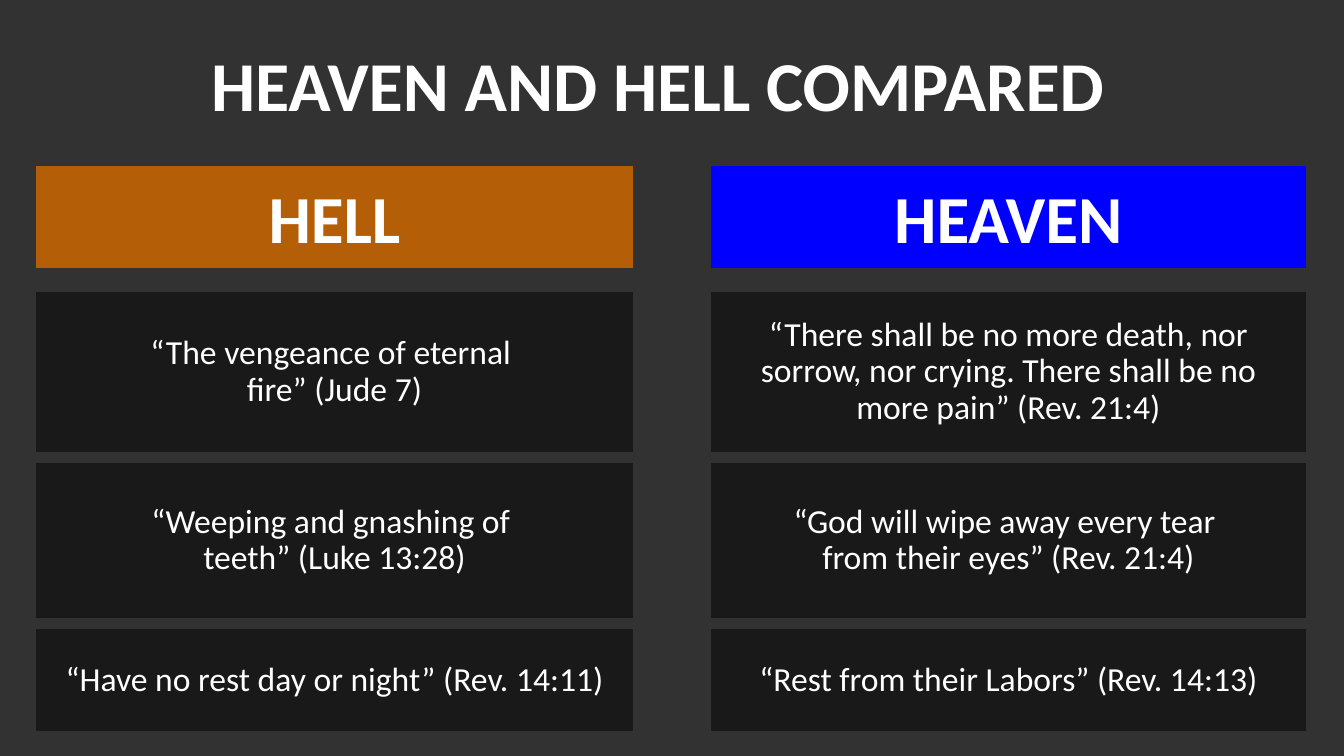
from pptx import Presentation
from pptx.dml.color import RGBColor as RGB
from pptx.enum.shapes import MSO_SHAPE as Shape
from pptx.enum.text import MSO_ANCHOR as Anchor, MSO_AUTO_SIZE as Fit, PP_ALIGN as Align
from pptx.util import Pt

HUES = {"back": "323232", "hell": "B45F07", "heaven": "0000FF",
        "card": "191919", "text": "FFFFFF"}


class Deck:
    """Holds the style and the current slide."""

    def __init__(self, font="Calibri"):
        self.font = font
        self.prs = Presentation()
        self.prs.slide_width, self.prs.slide_height = Pt(960), Pt(540)
        self.slide = self.prs.slides.add_slide(self.prs.slide_layouts[4])
        self.paint(self.slide.background.fill, "back")

    def paint(self, fill, hue):
        fill.solid()
        fill.fore_color.rgb = RGB.from_string(HUES[hue])

    def place(self, item, box):
        item.left, item.top, item.width, item.height = map(Pt, box)

    def block(self, item, hue):
        self.paint(item.fill, hue)
        self.paint(item.line.fill, hue)
        item.line.width = Pt(0.75)

    def label(self, item, text, size, bold=False, space=0.9):
        frame = item.text_frame
        frame.text = text
        frame.word_wrap = True
        frame.auto_size = Fit.NONE
        frame.vertical_anchor = Anchor.MIDDLE
        for para in frame.paragraphs:
            para.alignment = Align.CENTER
            para.line_spacing = space
            para.space_before = Pt(0)
            font = para.font
            font.name, font.size, font.bold = self.font, Pt(size), bold
            font.color.rgb = RGB.from_string(HUES["text"])

    def title(self, text, box):
        item = self.slide.shapes.title
        self.place(item, box)
        self.label(item, text, 50, True, 1.0)

    def head(self, index, text, box):
        item = self.slide.placeholders[index]
        self.place(item, box)
        self.block(item, text)
        self.label(item, text, 60, True)
        for run in item.text_frame.paragraphs[0].runs:
            run.font._element.set("cap", "small")

    def card(self, text, box):
        item = self.slide.shapes.add_shape(Shape.RECTANGLE, *map(Pt, box))
        item.shadow.inherit = False
        self.block(item, "card")
        self.label(item, text, 24)

    def save(self):
        # Drop placeholders that hold no text
        for item in list(self.slide.placeholders):
            if not item.text_frame.text:
                item._element.getparent().remove(item._element)
        self.prs.save("out.pptx")


# Placeholder index, heading, left, width, quotes
SIDES = [
    (1, "hell", 26, 426, [
        "“The vengeance of eternal \nfire” (Jude 7)",
        "“Weeping and gnashing of \nteeth” (Luke 13:28)",
        "“Have no rest day or night” (Rev. 14:11)"]),
    (3, "heaven", 508.3, 424, [
        "“There shall be no more death, nor sorrow, nor crying. "
        "There shall be no more pain” (Rev. 21:4)",
        "“God will wipe away every tear \nfrom their eyes” (Rev. 21:4)",
        "“Rest from their Labors” (Rev. 14:13)"]),
]
# Top and height of each row of quotes
ROWS = [(208.8, 113.8), (331.2, 110.2), (450, 72)]


def main():
    deck = Deck()
    deck.title("HEAVEN AND HELL COMPARED", (64, 26, 812, 68))
    # Two columns: coloured heading above its quotes
    for index, name, left, width, quotes in SIDES:
        deck.head(index, name, (left, 118.8, width, 72))
        for quote, (top, height) in zip(quotes, ROWS):
            deck.card(quote, (left, top, width, height))
    deck.save()


if __name__ == "__main__":
    main()
